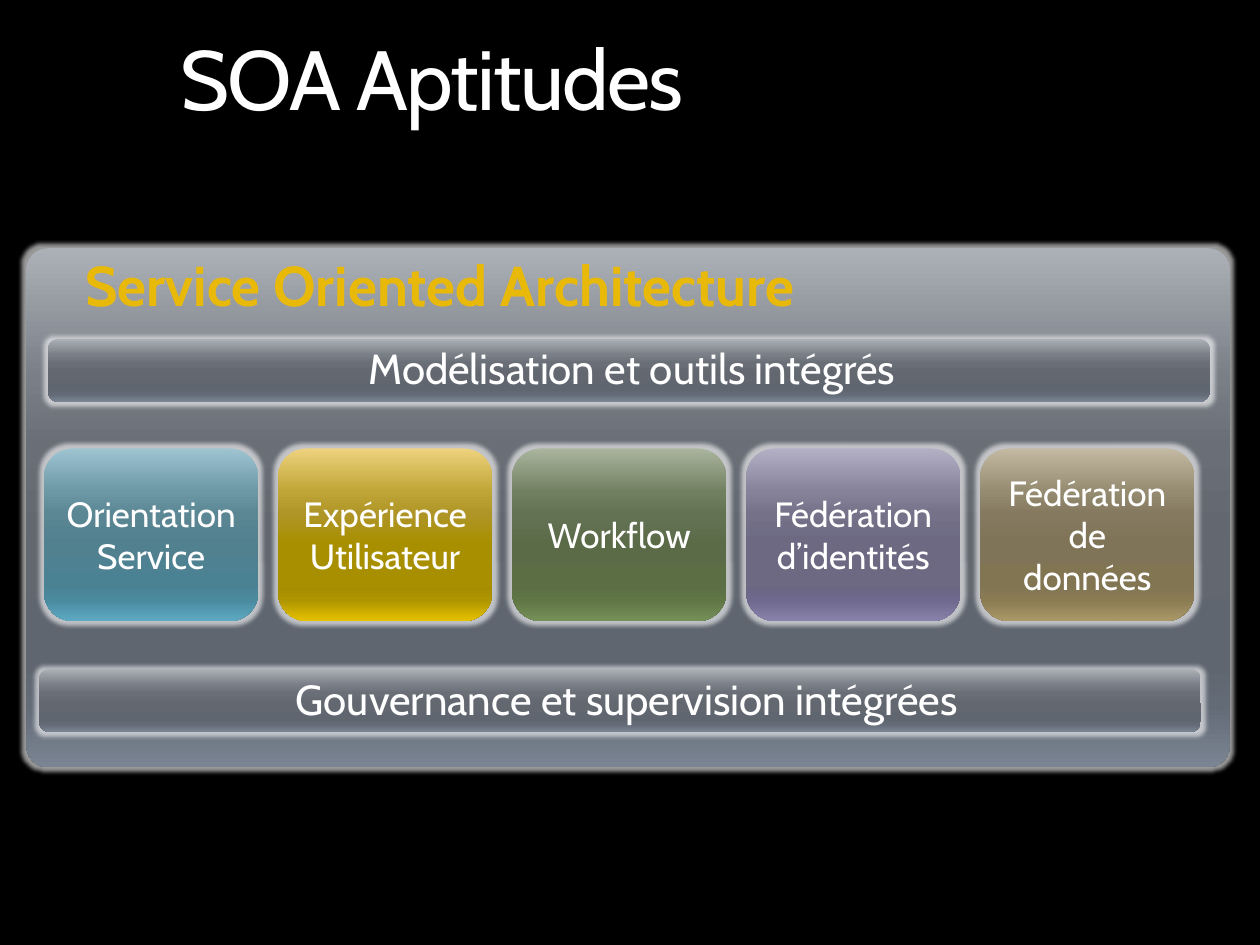
from dataclasses import dataclass

from lxml import etree
from pptx import Presentation
from pptx.dml.color import RGBColor
from pptx.enum.shapes import MSO_SHAPE as Shape
from pptx.enum.text import MSO_ANCHOR as Anchor, MSO_AUTO_SIZE as AutoSize, PP_ALIGN as Align
from pptx.oxml.ns import qn
from pptx.util import Inches, Pt


@dataclass(frozen=True)
class Theme:
    font: str = "Cabin"
    background: str = "000000"
    text: str = "FFFFFF"
    heading: str = "E9B90A"
    title_size: int = 48
    heading_size: int = 32
    bar_size: int = 24
    tile_size: int = 20
    # Every glossy gradient shares these stops, in percent
    stops: tuple = (0, 25, 38, 55, 80, 88, 100)
    grey: str = "ACB0B7 7A7F87 6A6F77 626770 5F6670 636B77 7B8492"
    blue: str = "9EC4D2 6C97A5 5B8694 51808F 4A8294 4A8BA0 5DAAC2"
    gold: str = "EED27E BFA536 AF9527 A88F00 A68D00 AF9500 E6C100"
    green: str = "A9B59D 728062 647254 5B6B48 5B6E44 607645 769058"
    violet: str = "B3B0C6 86829A 747188 6D6983 6A6684 6F698D 8982AC"
    sand: str = "C4BAA3 958B71 857A60 7F7457 827552 8C7C54 AA9868"


THEME = Theme()

# Label, gradient and side inset of each tile
TILES = [
    ("Orientation\nService", THEME.blue, 0),
    ("Expérience\nUtilisateur", THEME.gold, 0),
    ("Workflow", THEME.green, 0.1),
    ("Fédération\nd’identités", THEME.violet, 0.1),
    ("Fédération de données", THEME.sand, 0.1),
]


def write(text_frame, text, size, color=THEME.text, align=Align.LEFT, bold=False):
    text_frame.text = text
    text_frame.word_wrap = True
    for paragraph in text_frame.paragraphs:
        paragraph.alignment = align
        for run in paragraph.runs:
            run.font.name = THEME.font
            run.font.size = Pt(size)
            run.font.bold = bold
            run.font.color.rgb = RGBColor.from_string(color)


def add_color(parent, color):
    return etree.SubElement(parent, qn("a:srgbClr"), val=color)


def add_glossy_box(slide, left, top, width, height, colors, corner):
    """Rounded box with a vertical gradient and a soft white glow."""
    shape = slide.shapes.add_shape(
        Shape.ROUNDED_RECTANGLE, Inches(left), Inches(top), Inches(width), Inches(height))
    shape.adjustments[0] = corner
    shape.line.fill.background()
    shape.shadow.inherit = False
    shape.fill.gradient()
    shape.fill.gradient_angle = 270

    properties = shape._element.spPr
    stop_list = properties.find(qn("a:gradFill")).find(qn("a:gsLst"))
    for stop in list(stop_list):
        stop_list.remove(stop)
    for position, color in zip(THEME.stops, colors.split()):
        stop = etree.SubElement(stop_list, qn("a:gs"), pos=str(position * 1000))
        add_color(stop, color)

    glow = etree.SubElement(properties.find(qn("a:effectLst")), qn("a:glow"), rad=str(Pt(5)))
    etree.SubElement(add_color(glow, THEME.text), qn("a:alpha"), val="60000")
    return shape


def add_label(slide, left, top, width, height, text, size, **style):
    box = slide.shapes.add_textbox(Inches(left), Inches(top), Inches(width), Inches(height))
    write(box.text_frame, text, size, **style)
    box.text_frame.auto_size = AutoSize.SHAPE_TO_FIT_TEXT


def add_title(slide, left, top, width, height):
    title = slide.shapes.title
    title.left, title.top = Inches(left), Inches(top)
    title.width, title.height = Inches(width), Inches(height)
    write(title.text_frame, "SOA Aptitudes", THEME.title_size)
    title.text_frame.vertical_anchor = Anchor.TOP
    paragraph = title.text_frame.paragraphs[0]
    paragraph.line_spacing = 0.9
    paragraph.runs[0].font._element.set("spc", "-100")


def add_tiles(slide, left, top, width, height):
    """Row of equal tiles with equal gaps."""
    tile_width = 1.7
    pitch = (width - tile_width) / (len(TILES) - 1)
    for index, (label, colors, inset) in enumerate(TILES):
        tile = add_glossy_box(
            slide, left + index * pitch, top, tile_width, height, colors, 0.167)
        frame = tile.text_frame
        frame.margin_left = frame.margin_right = Inches(inset)
        frame.vertical_anchor = Anchor.MIDDLE
        write(frame, label, THEME.tile_size, align=Align.CENTER)


def add_architecture(slide, left, top, width, height):
    # Panel and the two bars across it
    add_glossy_box(slide, left, top, width, height, THEME.grey, 0.041)
    for x, y in ((0.1, 3.34), (0.17, 0.72)):
        add_glossy_box(slide, left + x, top + y, 9.22, 0.5, THEME.grey, 0.167)

    # Heading and bar labels
    add_label(slide, left + 0.37, top - 0.03, 8.53, 0.64, "Service Oriented Architecture",
              THEME.heading_size, color=THEME.heading, bold=True)
    for x, y, label_width, text in (
        (0.54, 0.7, 8.53, "Modélisation et outils intégrés"),
        (0.65, 3.33, 8.23, "Gouvernance et supervision intégrées"),
    ):
        add_label(slide, left + x, top + y, label_width, 0.5, text,
                  THEME.bar_size, align=Align.CENTER)

    # Capabilities between the bars
    add_tiles(slide, left + 0.14, top + 1.59, 9.13, 1.37)


def main():
    presentation = Presentation()
    presentation.slide_width, presentation.slide_height = Inches(10), Inches(7.5)
    slide = presentation.slides.add_slide(presentation.slide_layouts[5])
    slide.background.fill.solid()
    slide.background.fill.fore_color.rgb = RGBColor.from_string(THEME.background)
    add_title(slide, 1.33, 0.25, 9, 1.25)
    add_architecture(slide, 0.21, 1.97, 9.55, 4.12)
    presentation.save("out.pptx")


if __name__ == "__main__":
    main()
